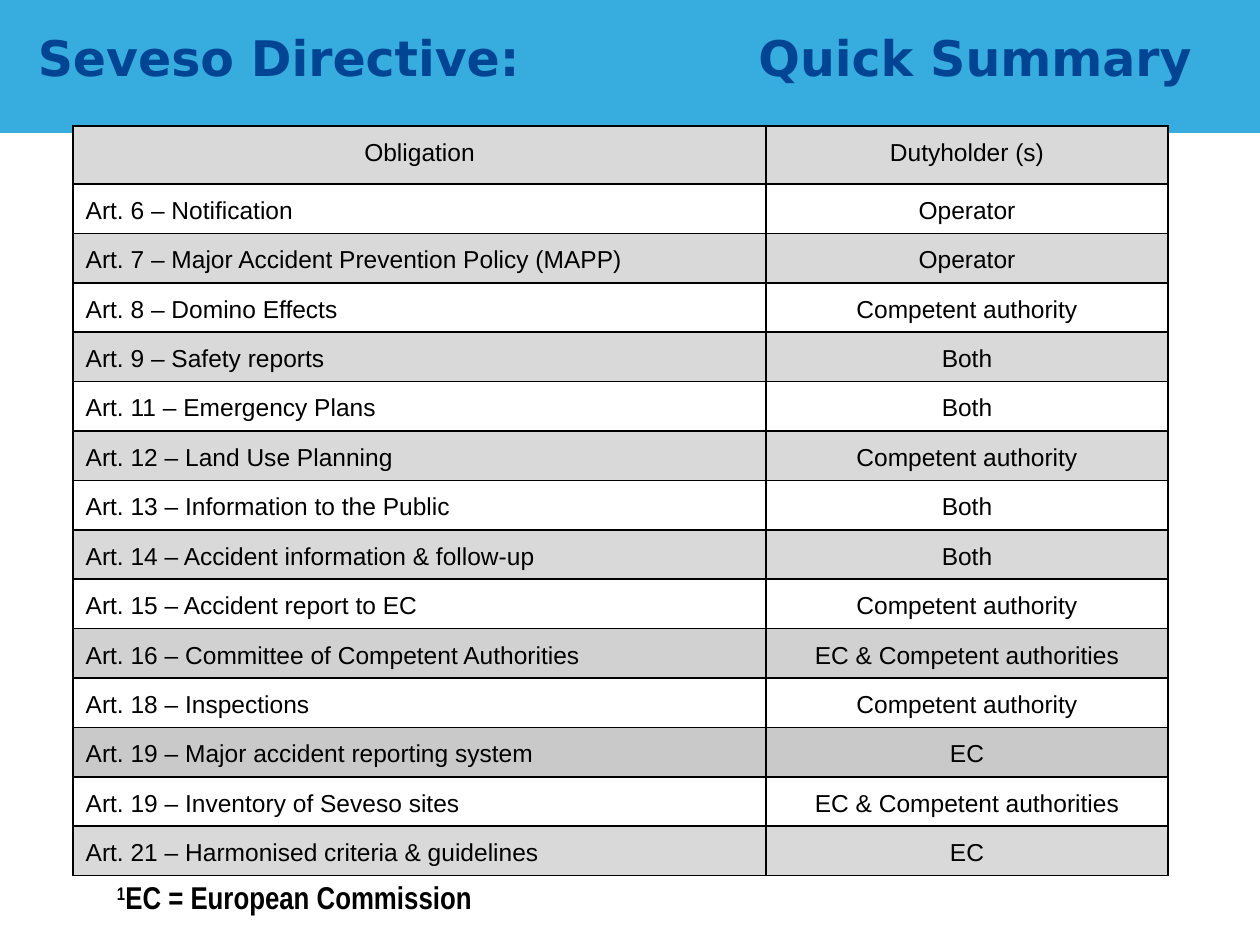
from lxml import etree
from pptx import Presentation
from pptx.dml.color import RGBColor
from pptx.enum.shapes import MSO_SHAPE
from pptx.enum.text import MSO_ANCHOR, PP_ALIGN
from pptx.oxml import parse_xml
from pptx.oxml.ns import qn
from pptx.util import Inches, Pt

RECT = MSO_SHAPE.RECTANGLE
TOP = MSO_ANCHOR.TOP
LEFT, CENTER = PP_ALIGN.LEFT, PP_ALIGN.CENTER
BLUE = RGBColor(0x37, 0xAC, 0xDE)
NAVY = RGBColor(0x00, 0x44, 0x94)
BLACK = RGBColor(0x00, 0x00, 0x00)
LIGHT = RGBColor(0xD9, 0xD9, 0xD9)
MEDIUM = RGBColor(0xD1, 0xD1, 0xD1)
SILVER = RGBColor(0xC0, 0xC0, 0xC0)
NS = "http://schemas.openxmlformats.org/drawingml/2006/main"


def add_text(p, text, font="Arial", size=14, color=BLACK, bold=False, align=LEFT,
             spacing=None, baseline=None):
    p.alignment = align
    if spacing:
        p.line_spacing = spacing
    r = p.add_run()
    r.text = text
    r.font.name = font
    r.font.size = Pt(size)
    r.font.bold = bold
    r.font.color.rgb = color
    if baseline:
        r._r.get_or_add_rPr().set("baseline", str(baseline * 1000))


def add_borders(cell):
    tcPr = cell._tc.get_or_add_tcPr()
    for side in ("lnL", "lnR", "lnT", "lnB"):
        tcPr.append(parse_xml(
            f'<a:{side} xmlns:a="{NS}" w="{Pt(1)}"><a:solidFill>'
            f'<a:srgbClr val="{BLACK}"/></a:solidFill></a:{side}>'))


prs = Presentation()
prs.slide_width, prs.slide_height = Inches(10), Inches(7.5)
s = prs.slides.add_slide(prs.slide_layouts[6])

band = s.shapes.add_shape(RECT, 0, 0, Inches(10), Inches(1.05))
band.shadow.inherit = False
band.fill.solid()
band.fill.fore_color.rgb = BLUE
band.line.color.rgb = BLUE
band.line.width = Pt(0.75)

title = s.shapes.add_textbox(Inches(0.3), Inches(0.22), Inches(9.47), Inches(0.47))
tf = title.text_frame
tf.word_wrap = True
tf.margin_left = tf.margin_right = tf.margin_top = tf.margin_bottom = 0
p = tf.paragraphs[0]
tabs = etree.SubElement(p._p.get_or_add_pPr(), qn("a:tabLst"))
etree.SubElement(tabs, qn("a:tab"), pos=str(Inches(5.72)), algn="l")
add_text(p, "Seveso Directive:\tQuick Summary", font="DejaVu Sans", size=28,
         color=NAVY, bold=True)

rows = [
    ("Obligation", "Dutyholder (s)"),
    ("Art. 6 – Notification", "Operator"),
    ("Art. 7 – Major Accident Prevention Policy (MAPP)", "Operator"),
    ("Art. 8 – Domino Effects", "Competent authority"),
    ("Art. 9 – Safety reports", "Both"),
    ("Art. 11 – Emergency Plans", "Both"),
    ("Art. 12 – Land Use Planning", "Competent authority"),
    ("Art. 13 – Information to the Public", "Both"),
    ("Art. 14 – Accident information & follow-up", "Both"),
    ("Art. 15 – Accident report to EC", "Competent authority"),
    ("Art. 16 – Committee of Competent Authorities", "EC & Competent authorities"),
    ("Art. 18 – Inspections", "Competent authority"),
    ("Art. 19 – Major accident reporting system", "EC"),
    ("Art. 19 – Inventory of Seveso sites", "EC & Competent authorities"),
    ("Art. 21 – Harmonised criteria & guidelines", "EC"),
]
row_heights = {0: 0.46, 7: 0.33}
row_fills = {10: MEDIUM, 12: SILVER}

table = s.shapes.add_table(len(rows), 2, Inches(0.58), Inches(1),
                           Inches(8.69), Inches(5.86)).table
table.columns[0].width = Inches(5.5)
table.columns[1].width = Inches(3.19)
for i, row in enumerate(rows):
    table.rows[i].height = Inches(row_heights.get(i, 0.39))
    for j, text in enumerate(row):
        cell = table.cell(i, j)
        cell.vertical_anchor = TOP
        add_borders(cell)
        if i % 2:
            cell.fill.background()
        else:
            color = row_fills.get(i, LIGHT)
            cell.fill.solid()
            cell.fill.fore_color.rgb = color
            if color == SILVER:
                clr = cell._tc.tcPr.find(qn("a:solidFill")).find(qn("a:srgbClr"))
                etree.SubElement(clr, qn("a:alpha"), val="85000")
        add_text(cell.text_frame.paragraphs[0], text, spacing=1.25,
                 align=CENTER if i == 0 or j == 1 else LEFT)

footnote = s.shapes.add_textbox(Inches(0.83), Inches(6.92), Inches(7.42), Inches(0.4))
tf = footnote.text_frame
tf.word_wrap = True
p = tf.paragraphs[0]
add_text(p, "1", font="Arial Narrow", size=18, bold=True, baseline=30)
add_text(p, "EC = European Commission", font="Arial Narrow", size=18, bold=True)

prs.save("out.pptx")
